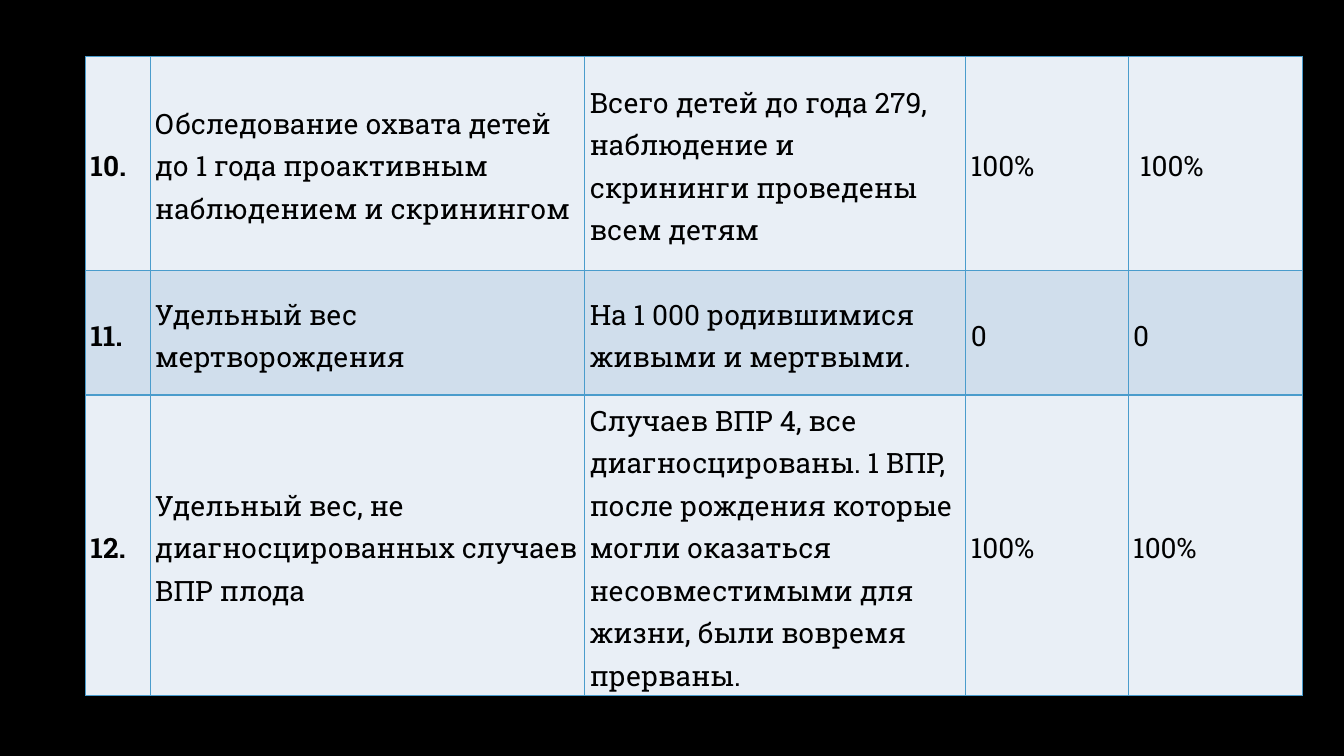
from dataclasses import dataclass

from lxml.etree import SubElement
from pptx import Presentation
from pptx.dml.color import RGBColor as Color
from pptx.enum.text import MSO_ANCHOR as Anchor
from pptx.oxml.ns import qn
from pptx.util import Inches, Pt


@dataclass(frozen=True)
class Theme:
    """Colours, type and spacing of the slide."""

    background: str = "000000"
    text: str = "000000"
    bands: tuple = ("E9EFF6", "D0DEEC")
    border: str = "4A9CCC"
    border_width: float = 1
    font: str = "Roboto Slab"
    size: float = 20
    line_spacing: float = 1.15
    side_margin: float = 0.05


THEME = Theme()
SLIDE_SIZE = (13.33, 7.5)
TABLE_BOX = (0.85, 0.56, 12.07, 6.34)
COLUMN_WIDTHS = (0.64, 4.31, 3.78, 1.61, 1.73)
ROW_HEIGHTS = (2.12, 1.24, 2.98)
INDICATORS = (
    (
        "10.",
        "Обследование охвата детей до 1 года проактивным наблюдением и скринингом",
        "Всего детей до года 279, наблюдение и скрининги проведены всем детям",
        "100%",
        " 100%",
    ),
    (
        "11.",
        "Удельный вес мертворождения",
        "На 1 000 родившимися живыми и мертвыми.",
        "0",
        "0",
    ),
    (
        "12.",
        "Удельный вес, не диагносцированных случаев ВПР плода",
        "Случаев ВПР 4, все диагносцированы. 1 ВПР, после рождения которые "
        "могли оказаться несовместимыми для жизни, были вовремя прерваны.",
        "100%",
        "100%",
    ),
)


def add_borders(cell):
    """Draw a thin line on all four sides of a cell without a fill yet."""
    properties = cell._tc.get_or_add_tcPr()
    for side in ("lnL", "lnR", "lnT", "lnB"):
        line = SubElement(properties, qn(f"a:{side}"), w=str(Pt(THEME.border_width)))
        fill = SubElement(line, qn("a:solidFill"))
        SubElement(fill, qn("a:srgbClr"), val=THEME.border)


def fill_cell(cell, text, band, bold):
    """Write and format one cell."""
    add_borders(cell)
    cell.fill.solid()
    cell.fill.fore_color.rgb = Color.from_string(band)
    cell.vertical_anchor = Anchor.MIDDLE
    cell.margin_left = cell.margin_right = Inches(THEME.side_margin)
    cell.margin_top = cell.margin_bottom = 0
    cell.text = text
    paragraph = cell.text_frame.paragraphs[0]
    paragraph.line_spacing = THEME.line_spacing
    paragraph.font.name = THEME.font
    paragraph.font.size = Pt(THEME.size)
    paragraph.font.bold = bold
    paragraph.font.color.rgb = Color.from_string(THEME.text)


def add_indicator_table(slide, box):
    """Place the indicator table in the given box, sharing out its size."""
    left, top, width, height = (Inches(length) for length in box)
    table = slide.shapes.add_table(
        len(ROW_HEIGHTS), len(COLUMN_WIDTHS), left, top, width, height
    ).table
    table.first_row = False
    for column, share in zip(table.columns, COLUMN_WIDTHS):
        column.width = int(width * share / sum(COLUMN_WIDTHS))
    for row, share in zip(table.rows, ROW_HEIGHTS):
        row.height = int(height * share / sum(ROW_HEIGHTS))
    for row_index, texts in enumerate(INDICATORS):
        band = THEME.bands[row_index % len(THEME.bands)]
        for column_index, text in enumerate(texts):
            cell = table.cell(row_index, column_index)
            fill_cell(cell, text, band, bold=column_index == 0)


def main():
    """Build and save the presentation."""
    presentation = Presentation()
    presentation.slide_width, presentation.slide_height = map(Inches, SLIDE_SIZE)
    slide = presentation.slides.add_slide(presentation.slide_layouts[6])
    slide.background.fill.solid()
    slide.background.fill.fore_color.rgb = Color.from_string(THEME.background)
    add_indicator_table(slide, TABLE_BOX)
    presentation.save("out.pptx")


if __name__ == "__main__":
    main()
